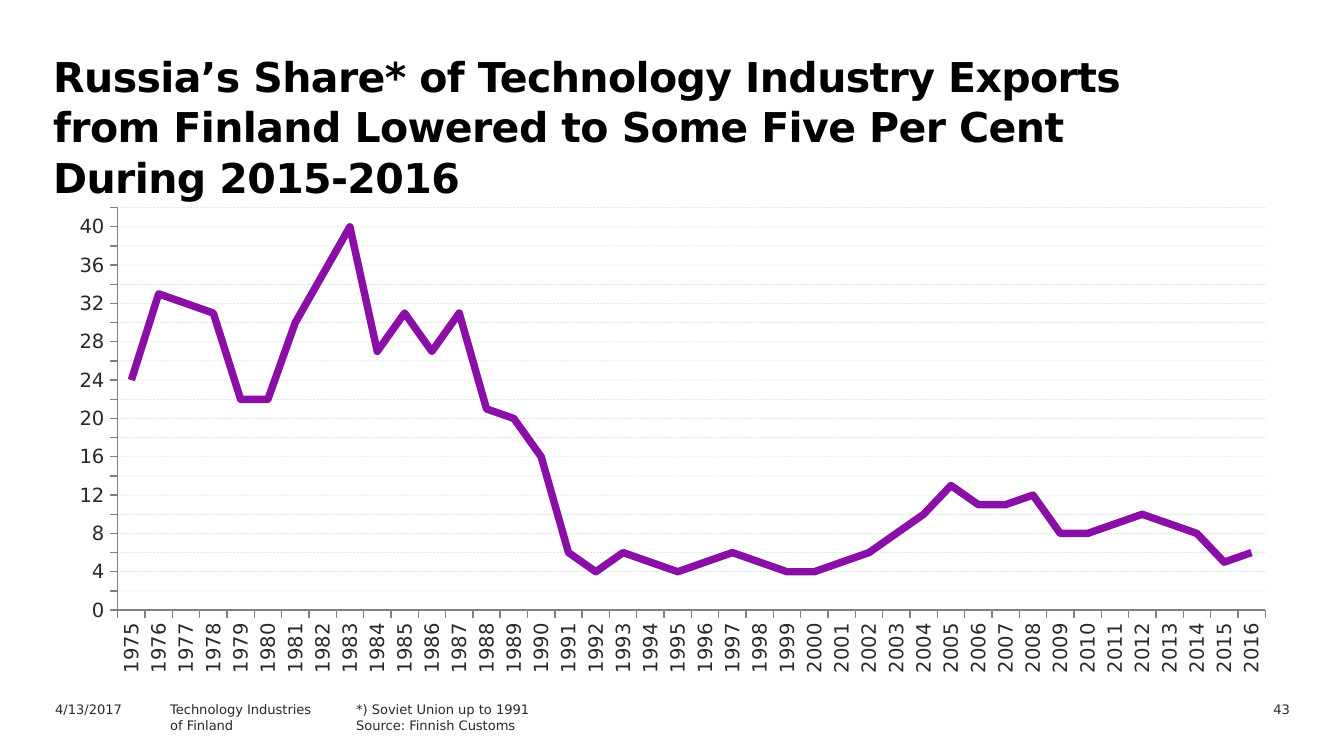
"""Build a slide with a line chart of Russia's share of Finnish technology exports."""
from lxml.etree import SubElement
from pptx import Presentation
from pptx.chart.data import CategoryChartData
from pptx.dml.color import RGBColor
from pptx.enum.chart import XL_CHART_TYPE as ChartType, XL_TICK_MARK as TickMark
from pptx.enum.dml import MSO_LINE_DASH_STYLE as Dash
from pptx.enum.text import PP_ALIGN as Align
from pptx.oxml import parse_xml
from pptx.oxml.ns import nsdecls, qn
from pptx.util import Pt

PX = 9144000 // 1344
FONT = "DejaVu Sans"
INK = "29282E"
PURPLE = "8A0FA6"


def color(hex_code):
    return RGBColor.from_string(hex_code)


def add_text(slide, box, lines, size, ink=INK, bold=False, **paragraph_format):
    shape = slide.shapes.add_textbox(*(length * PX for length in box))
    frame = shape.text_frame
    frame.word_wrap = True
    frame.text = "\n".join(lines)
    for paragraph in frame.paragraphs:
        for name, value in paragraph_format.items():
            setattr(paragraph, name, value)
        for run in paragraph.runs:
            for name, value in {"name": FONT, "size": Pt(size), "bold": bold}.items():
                setattr(run.font, name, value)
            run.font.color.rgb = color(ink)
    return shape


presentation = Presentation()
presentation.slide_width = 1344 * PX
presentation.slide_height = 756 * PX
slide = presentation.slides.add_slide(presentation.slide_layouts[6])

title = add_text(
    slide, (40, 42, 1172, 95),
    ["Russia’s Share* of Technology Industry Exports from Finland "
     "Lowered to Some Five Per Cent During 2015-2016"],
    22, "000000", True, line_spacing=Pt(27))
title.text_frame.margin_top = 8 * PX
title.text_frame.paragraphs[0].runs[0].font._element.set("spc", "-30")

footers = [
    (42, 136, ["4/13/2017"], Align.LEFT),
    (157, 305, ["Technology Industries", "of Finland"], Align.LEFT),
    (343, 437, ["*) Soviet Union up to 1991", "Source: Finnish Customs"], Align.LEFT),
    (1177, 126, ["43"], Align.RIGHT),
]
for left, width, lines, alignment in footers:
    add_text(slide, (left, 695, width, 24), lines, 7, alignment=alignment)

shares = [
    24, 33, 32, 31, 22, 22, 30, 35, 40, 27, 31, 27, 31, 21,
    20, 16, 6, 4, 6, 5, 4, 5, 6, 5, 4, 4, 5, 6,
    8, 10, 13, 11, 11, 12, 8, 8, 9, 10, 9, 8, 5, 6,
]
chart_data = CategoryChartData(number_format="0")
chart_data.categories = [str(year) for year in range(1975, 2017)]
chart_data.add_series("Series 1", shares)
chart = slide.shapes.add_chart(
    ChartType.LINE, 56 * PX, 198 * PX, 1234 * PX, 485 * PX, chart_data).chart
chart.has_legend = False
chart.has_title = False
chart.font.name = FONT
chart.font.size = Pt(18)
chart.font.color.rgb = color(INK)

plot = chart.plots[0]
plot.vary_by_categories = False
series = plot.series[0]
series.smooth = False
series.format.line.color.rgb = color(PURPLE)
series.format.line.width = Pt(4)

for axis in (chart.category_axis, chart.value_axis):
    axis.major_tick_mark = TickMark.OUTSIDE
    axis.minor_tick_mark = TickMark.NONE
    axis.format.line.color.rgb = color("808080")
    axis.format.line.width = Pt(0.75)
    labels = axis.tick_labels
    labels.number_format = "0"
    labels.number_format_is_linked = False
    labels.font.name = FONT
    labels.font.size = Pt(10.5)
    labels.font.color.rgb = color(INK)

category_text = chart.category_axis._element.find(qn("c:txPr"))
category_text.find(qn("a:bodyPr")).set("rot", "-5400000")

value_axis = chart.value_axis
scale = {"minimum_scale": 0, "maximum_scale": 42, "major_unit": 2, "has_major_gridlines": True}
for name, value in scale.items():
    setattr(value_axis, name, value)
grid_line = value_axis.major_gridlines.format.line
grid_line.color.rgb = color(INK)
grid_line.width = Pt(0.25)
grid_line.dash_style = Dash.DASH
grid_ink = value_axis._element.find(qn("c:majorGridlines")).find(".//" + qn("a:srgbClr"))
SubElement(grid_ink, qn("a:alpha"), val="20000")

plot_area = chart._chartSpace.chart.plotArea
for layout in plot_area.findall(qn("c:layout")):
    plot_area.remove(layout)
plot_area.insert(0, parse_xml(
    f'<c:layout {nsdecls("c")}><c:manualLayout><c:layoutTarget val="inner"/>'
    '<c:xMode val="edge"/><c:yMode val="edge"/><c:x val="0.05"/><c:y val="0.02"/>'
    '<c:w val="0.93"/><c:h val="0.83"/></c:manualLayout></c:layout>'))

presentation.save("out.pptx")
